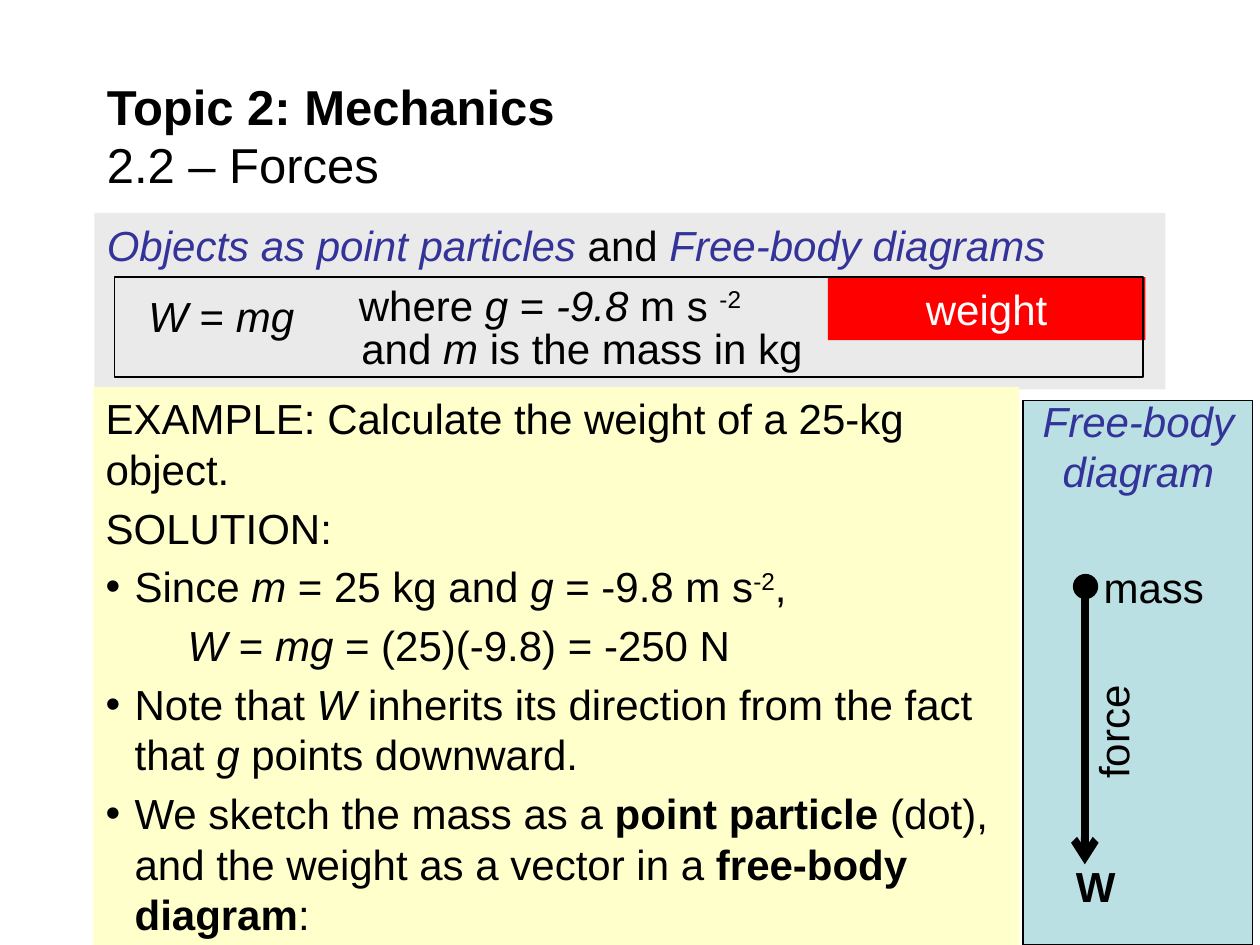
from lxml import etree
from pptx import Presentation
from pptx.dml.color import RGBColor
from pptx.enum import shapes, text
from pptx.oxml.ns import qn
from pptx.util import Inches, Pt

BLACK = RGBColor(0x00, 0x00, 0x00)
WHITE = RGBColor(0xFF, 0xFF, 0xFF)
INDIGO = RGBColor(0x33, 0x33, 0x99)
GRAY = RGBColor(0xEA, 0xEA, 0xEA)
YELLOW = RGBColor(0xFF, 0xFF, 0xCC)
RED = RGBColor(0xFF, 0x00, 0x00)
TEAL = RGBColor(0xBB, 0xE0, 0xE3)
CENTER = text.PP_ALIGN.CENTER

# A paragraph is a list of (words, style): i italic, b bold, ^ superscript.
TITLE = [[("Topic 2: Mechanics", "b")], [("2.2 – Forces", "")]]
HEADING = [[("Objects as point particles", "i"), (" and ", ""),
            ("Free-body diagrams", "i")]]
FORMULA = [[("W", "i"), (" = ", ""), ("mg", "i")]]
GRAVITY = [[("where", ""), (" g ", "i"), ("= ", ""), ("-9.8 ", "i"),
            ("m s ", ""), ("-2", "^")]]
MASS_UNIT = [[("and", ""), (" m ", "i"), ("is the mass in kg", "")]]
EXAMPLE = [
    [("EXAMPLE: Calculate the weight of a 25-kg object.", "")],
    [("SOLUTION:", "")],
    [("Since ", ""), ("m", "i"), (" = 25 kg and ", ""), ("g ", "i"),
     ("= -9.8 m s", ""), ("-2", "^"), (",", "")],
    [("W", "i"), (" = ", ""), ("mg", "i"), (" = (25)(-9.8) = -250 N", "")],
    [("Note that ", ""), ("W", "i"),
     (" inherits its direction from the fact that ", ""), ("g", "i"),
     (" points downward.", "")],
    [("We sketch the mass as a ", ""), ("point particle", "b"),
     (" (dot), and the weight as a vector in a ", ""),
     ("free-body diagram", "b"), (":", "")],
]
BULLETED = (2, 4, 5)
EQUATION = 3

deck = Presentation()
deck.slide_width, deck.slide_height = Inches(10), Inches(7.5)
page = deck.slides.add_slide(deck.slide_layouts[6])


def add_box(left, top, width, height, fill=None, line=None,
            kind=shapes.MSO_SHAPE.RECTANGLE):
    box = page.shapes.add_shape(kind, *map(Inches, (left, top, width, height)))
    box.shadow.inherit = False
    if fill is None:
        box.fill.background()
    else:
        box.fill.solid()
        box.fill.fore_color.rgb = fill
    if line is None:
        box.line.fill.background()
    else:
        box.line.color.rgb = BLACK
        box.line.width = Pt(line)
    return box


def add_label(left, top, width, height, content, **style):
    label = page.shapes.add_textbox(*map(Inches, (left, top, width, height)))
    return write(label, content, **style)


def write(box, content, size=24, color=BLACK, italic_color=None,
          align=text.PP_ALIGN.LEFT, anchor=text.MSO_ANCHOR.TOP,
          gap=0, line_spacing=None):
    frame = box.text_frame
    frame.word_wrap = True
    frame.vertical_anchor = anchor
    for number, spans in enumerate(content):
        para = frame.add_paragraph() if number else frame.paragraphs[0]
        para.alignment = align
        para.space_before = Pt(gap)
        para.line_spacing = line_spacing
        for words, style in spans:
            span = para.add_run()
            span.text = words
            font = span.font
            font.name, font.size = "Arial", Pt(size)
            font.bold, font.italic = "b" in style, "i" in style
            font.color.rgb = italic_color if italic_color and font.italic else color
            if "^" in style:
                font._element.set("baseline", "30000")
    return box


def set_indent(para, left, first=0, bullet=None):
    props = para._p.get_or_add_pPr()
    props.set("marL", str(Inches(left)))
    props.set("indent", str(Inches(first)))
    if bullet:
        etree.SubElement(props, qn("a:buFont")).set("typeface", "Arial")
        etree.SubElement(props, qn("a:buChar")).set("char", bullet)


def add_arrow(start, end, width):
    arrow = page.shapes.add_connector(shapes.MSO_CONNECTOR.STRAIGHT,
                                      *map(Inches, start + end))
    arrow.line.color.rgb = BLACK
    arrow.line.width = Pt(width)
    etree.SubElement(arrow.line._get_or_add_ln(), qn("a:tailEnd")).set("type", "arrow")
    etree.SubElement(arrow._element.spPr, qn("a:effectLst"))


# Panels and title
add_box(8.12, 3.18, 1.82, 4.32, TEAL, 0.75)
add_label(8.07, 3.09, 1.93, 0.91, [[("Free-body diagram", "i")]],
          color=INDIGO, align=CENTER)
write(add_box(0.75, 1.69, 8.5, 1.4, GRAY), HEADING, italic_color=INDIGO)
add_label(0.75, 0.58, 8.5, 0.98, TITLE, size=28, anchor=text.MSO_ANCHOR.MIDDLE)

# Worked example
example = write(add_box(0.74, 3.07, 7.35, 4.43, YELLOW), EXAMPLE, gap=4.8)
for number, para in enumerate(example.text_frame.paragraphs):
    if number in BULLETED:
        set_indent(para, 0.23, -0.23, "•")
    elif number == EQUATION:
        set_indent(para, 0.65)

# Free-body diagram
add_box(8.52, 4.56, 0.19, 0.19, BLACK, 0.75, shapes.MSO_SHAPE.OVAL)
add_label(8.66, 4.41, 1.11, 0.5, [[("mass", "")]])
add_arrow((8.61, 4.67), (8.61, 6.86), 4.5)
add_label(8.22, 5.42, 1.22, 0.5, [[("force", "")]]).rotation = 270
add_label(8.44, 6.78, 0.44, 0.5, [[("W", "b")]])

# Weight formula
add_label(1.08, 2.3, 1.91, 0.35, FORMULA, line_spacing=0.9)
write(add_box(6.57, 2.2, 2.52, 0.5, RED), [[("weight", "")]],
      color=WHITE, align=CENTER)
add_box(0.91, 2.2, 8.16, 0.79, line=1)
add_label(2.75, 2.17, 3.36, 0.5, GRAVITY)
add_label(2.77, 2.51, 4.25, 0.5, MASS_UNIT)

deck.save("out.pptx")
